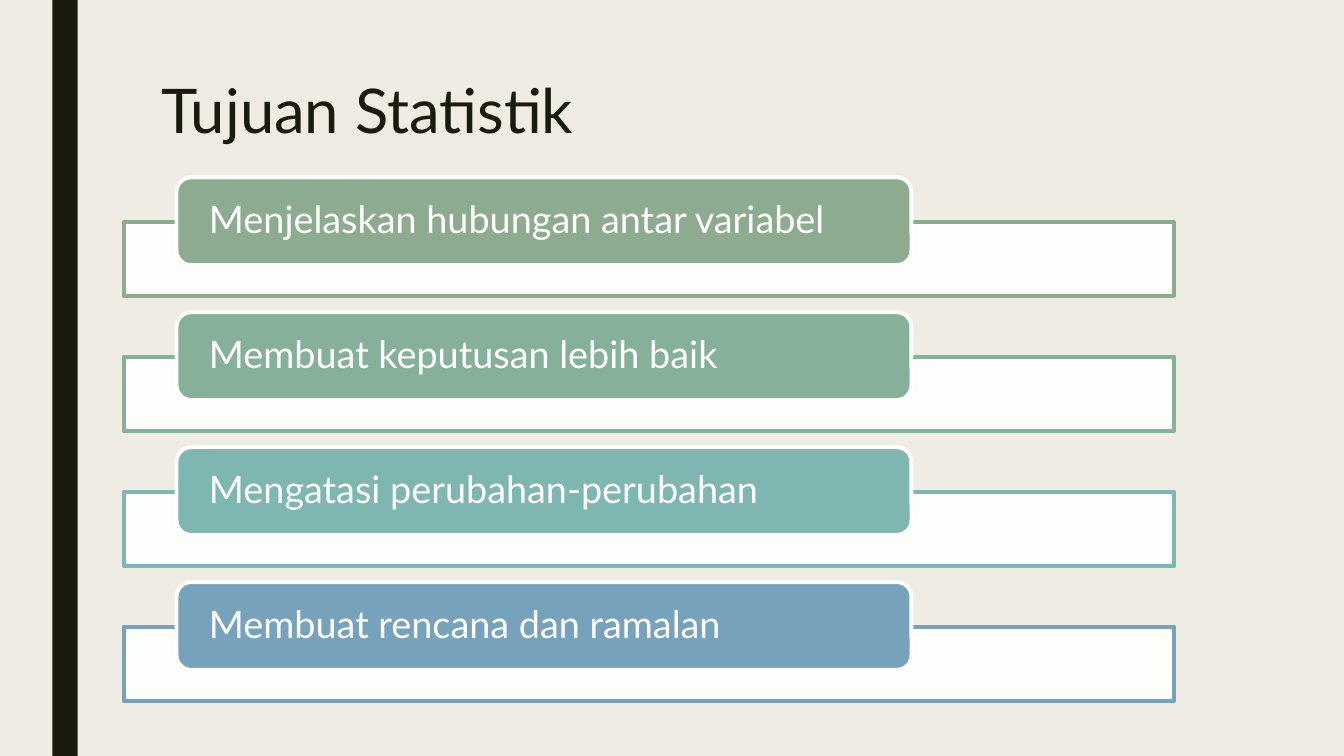
"""Build the slide "Tujuan Statistik" with four labelled goal rows."""
from dataclasses import dataclass

import lxml.etree
import pptx
import pptx.dml.color
import pptx.enum.shapes
import pptx.enum.text
import pptx.oxml.ns
import pptx.shapes.autoshape
import pptx.slide
import pptx.util

Cm = pptx.util.Cm
Shape = pptx.shapes.autoshape.Shape
Slide = pptx.slide.Slide
Preset = pptx.enum.shapes.MSO_SHAPE
Anchor = pptx.enum.text.MSO_ANCHOR

COLORS = {
    "background": "EFEDE3",
    "dark": "191B0E",
    "white": "FFFFFF",
    "sage": "8DAB8E",
    "green": "86B09A",
    "teal": "7EB6B1",
    "blue": "77A2BB",
}
FONT = "Lato"
LINE_WIDTH = 2.75
FIRST_LABEL_TOP = 4.47
ROW_STEP = 3.4
FRAME_OFFSET = 1.12


@dataclass(frozen=True)
class Box:
    left: float
    top: float
    width: float
    height: float


@dataclass(frozen=True)
class Goal:
    text: str
    color: str


GOALS = [
    Goal("Menjelaskan hubungan antar variabel", "sage"),
    Goal("Membuat keputusan lebih baik", "green"),
    Goal("Mengatasi perubahan-perubahan", "teal"),
    Goal("Membuat rencana dan ramalan", "blue"),
]


def rgb(name: str) -> pptx.dml.color.RGBColor:
    return pptx.dml.color.RGBColor.from_string(COLORS[name])


def lengths(box: Box) -> tuple[int, int, int, int]:
    return Cm(box.left), Cm(box.top), Cm(box.width), Cm(box.height)


def add_block(slide: Slide, preset: Preset, box: Box, fill: str,
              line: str | None = None, opacity: int = 100) -> Shape:
    shape = slide.shapes.add_shape(preset, *lengths(box))
    shape.shadow.inherit = False
    shape.fill.solid()
    shape.fill.fore_color.rgb = rgb(fill)
    if opacity < 100:
        color = shape.fill._xPr.find(".//" + pptx.oxml.ns.qn("a:srgbClr"))
        alpha = lxml.etree.SubElement(color, pptx.oxml.ns.qn("a:alpha"))
        alpha.set("val", str(opacity * 1000))
    if line is None:
        shape.line.fill.background()
    else:
        shape.line.color.rgb = rgb(line)
        shape.line.width = pptx.util.Pt(LINE_WIDTH)
    return shape


def write_text(shape: Shape, text: str, *, size: float, color: str, spacing: float,
               anchor: Anchor, side_margin: float, vertical_margin: float) -> None:
    frame = shape.text_frame
    frame.word_wrap = True
    frame.vertical_anchor = anchor
    frame.margin_left = frame.margin_right = Cm(side_margin)
    frame.margin_top = frame.margin_bottom = Cm(vertical_margin)
    paragraph = frame.paragraphs[0]
    paragraph.alignment = pptx.enum.text.PP_ALIGN.LEFT
    paragraph.line_spacing = spacing
    run = paragraph.add_run()
    run.text = text
    run.font.name = FONT
    run.font.size = pptx.util.Pt(size)
    run.font.color.rgb = rgb(color)


def add_goal(slide: Slide, goal: Goal, label_top: float) -> None:
    frame_box = Box(3.12, label_top + FRAME_OFFSET, 26.47, 1.88)
    add_block(slide, Preset.RECTANGLE, frame_box, "white", goal.color, opacity=90)
    label_box = Box(4.45, label_top, 18.52, 2.21)
    label = add_block(slide, Preset.ROUNDED_RECTANGLE, label_box, goal.color, "white")
    write_text(label, goal.text, size=27, color="white", spacing=0.9,
               anchor=Anchor.MIDDLE, side_margin=0.71, vertical_margin=0)


def main() -> None:
    presentation = pptx.Presentation()
    presentation.slide_width = Cm(33.87)
    presentation.slide_height = Cm(19.05)
    slide = presentation.slides.add_slide(presentation.slide_layouts[6])
    slide.background.fill.solid()
    slide.background.fill.fore_color.rgb = rgb("background")

    add_block(slide, Preset.RECTANGLE, Box(1.32, 0, 0.64, 19.05), "dark")
    title = slide.shapes.add_textbox(*lengths(Box(3.81, 1.91, 26.67, 4.11)))
    write_text(title, "Tujuan Statistik", size=44, color="dark", spacing=0.89,
               anchor=Anchor.TOP, side_margin=0.25, vertical_margin=0.13)
    for index, goal in enumerate(GOALS):
        add_goal(slide, goal, FIRST_LABEL_TOP + index * ROW_STEP)

    presentation.save("out.pptx")


if __name__ == "__main__":
    main()
